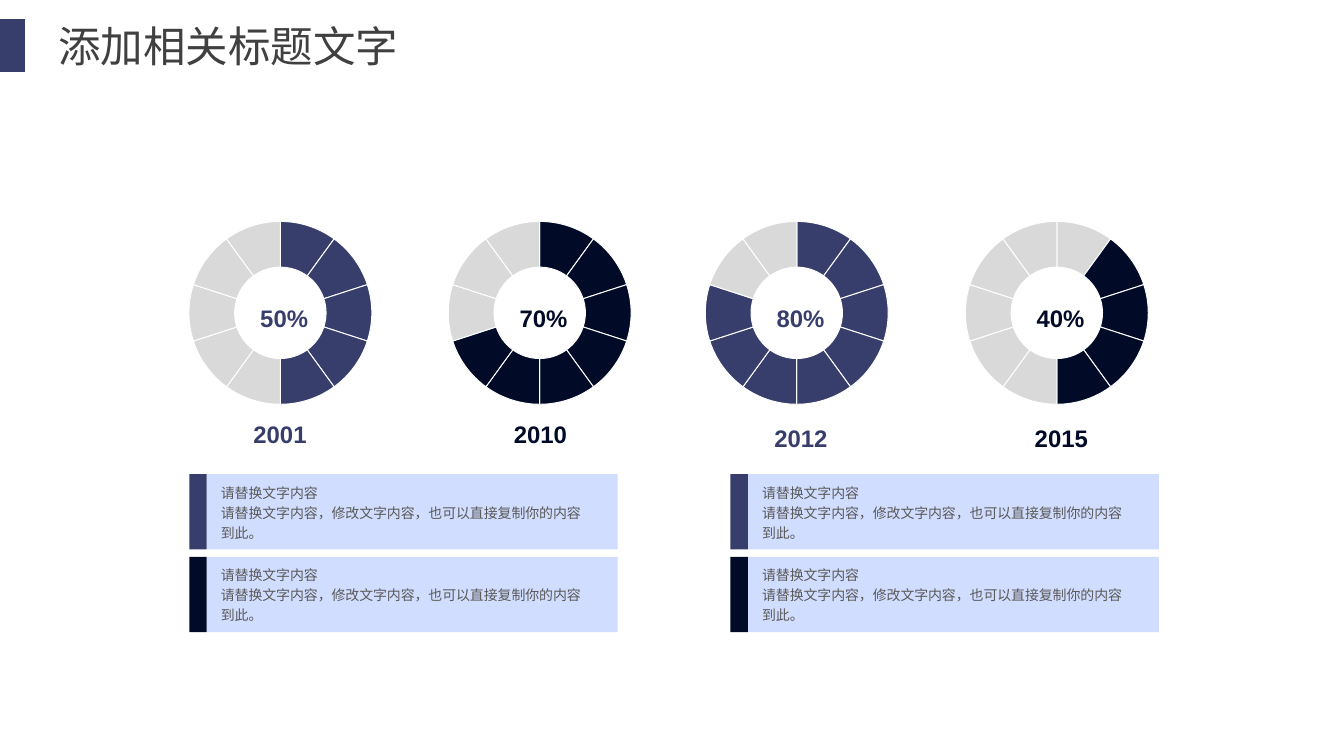
from pptx import Presentation
from pptx.chart.data import CategoryChartData
from pptx.dml.color import RGBColor
from pptx.enum.chart import XL_CHART_TYPE as ChartType
from pptx.enum.shapes import MSO_SHAPE as Shape
from pptx.enum.text import MSO_ANCHOR as Anchor, MSO_AUTO_SIZE as AutoSize, PP_ALIGN as Align
from pptx.oxml.ns import qn
from pptx.util import Cm, Pt

INDIGO = RGBColor(0x38, 0x3E, 0x6B)
NAVY = RGBColor(0x01, 0x0B, 0x28)
PALE_BLUE = RGBColor(0xD1, 0xDD, 0xFE)
LIGHT_GREY = RGBColor(0xD9, 0xD9, 0xD9)
BODY_GREY = RGBColor(0x59, 0x59, 0x59)
TITLE_GREY = RGBColor(0x40, 0x40, 0x40)
WHITE = RGBColor(0xFF, 0xFF, 0xFF)
BLACK = RGBColor(0, 0, 0)
FONT = "Arial"

HEADING = "添加相关标题文字"
# year, share, first filled segment, filled segments, colour, ring left, year top
RINGS = [
    ("2001", "50%", 0, 5, INDIGO, 4.67, 11),
    ("2010", "70%", 0, 7, NAVY, 11.56, 11),
    ("2012", "80%", 0, 8, INDIGO, 18.39, 11.1),
    ("2015", "40%", 1, 4, NAVY, 25.3, 11.1),
]
SEGMENTS = 10
NOTE = "请替换文字内容\n请替换文字内容，修改文字内容，也可以直接复制你的内容到此。"
PANEL_LEFTS = (5.03, 19.41)
PANEL_ROWS = ((12.6, INDIGO), (14.8, NAVY))

RING_TOP, RING_WIDTH, RING_HEIGHT = 5.38, 5.56, 5.87
YEAR_LEFT, YEAR_STEP = 6.73, 6.92
STRIPE_WIDTH, PANEL_WIDTH, PANEL_HEIGHT = 0.46, 10.92, 2


def add_block(shapes, left, top, width, height, colour):
    """Add a plain filled rectangle."""
    block = shapes.add_shape(Shape.RECTANGLE, Cm(left), Cm(top), Cm(width), Cm(height))
    block.shadow.inherit = False
    block.fill.solid()
    block.fill.fore_color.rgb = colour
    block.line.fill.background()


def style_text(frame, text, size, colour, bold=False, align=Align.LEFT, spacing=1.2):
    """Fill a text frame without margins and format its runs."""
    frame.text = text
    frame.margin_left = frame.margin_right = frame.margin_top = frame.margin_bottom = 0
    for paragraph in frame.paragraphs:
        paragraph.alignment = align
        paragraph.line_spacing = spacing
        for run in paragraph.runs:
            run.font.name = FONT
            run.font.size = Pt(size)
            run.font.bold = bold
            run.font.color.rgb = colour


def add_label(shapes, left, top, width, height, wrap=True, anchor=Anchor.TOP):
    """Add an empty text box and return its frame."""
    frame = shapes.add_textbox(Cm(left), Cm(top), Cm(width), Cm(height)).text_frame
    frame.word_wrap = wrap
    frame.vertical_anchor = anchor
    return frame


def add_ring(shapes, left, first, filled, colour):
    """Add a doughnut of equal segments with some of them coloured."""
    segments = CategoryChartData()
    segments.categories = [str(number + 1) for number in range(SEGMENTS)]
    segments.add_series("Series 1", [10] * SEGMENTS)
    ring = shapes.add_chart(ChartType.DOUGHNUT, Cm(left), Cm(RING_TOP),
                            Cm(RING_WIDTH), Cm(RING_HEIGHT), segments).chart
    ring.has_legend = False
    ring.has_title = False
    ring.font.name = FONT
    ring.font.size = Pt(18)
    ring.font.color.rgb = BLACK
    plot = ring.plots[0]
    plot.vary_by_categories = True
    for hole in ring.element.iter(qn("c:holeSize")):
        hole.set("val", "80")
    for number in range(SEGMENTS):
        segment = plot.series[0].points[number].format
        segment.fill.solid()
        segment.fill.fore_color.rgb = colour if first <= number < first + filled else LIGHT_GREY
        segment.line.color.rgb = WHITE
        segment.line.width = Pt(0.75)


def add_panel(shapes, left, top, colour):
    """Add a pale panel with a coloured stripe and its note."""
    panel = shapes.add_group_shape().shapes
    text_left = left + STRIPE_WIDTH
    add_block(panel, text_left, top, PANEL_WIDTH, PANEL_HEIGHT, PALE_BLUE)
    add_block(panel, left, top, STRIPE_WIDTH, PANEL_HEIGHT, colour)
    note = add_label(shapes, text_left + 0.38, top + 0.18, 9.91, 1.63)
    style_text(note, NOTE, 10.5, BODY_GREY)


def main():
    """Build the slide and save it."""
    deck = Presentation()
    deck.slide_width, deck.slide_height = Cm(35.71), Cm(20.09)
    slide = deck.slides.add_slide(deck.slide_layouts[5])
    shapes = slide.shapes

    title = shapes.title
    title.left, title.top, title.width, title.height = Cm(1.55), Cm(0.53), Cm(11), Cm(1.37)
    style_text(title.text_frame, HEADING, 32, TITLE_GREY, spacing=1.0)
    title.text_frame.vertical_anchor = Anchor.TOP
    title.text_frame.auto_size = AutoSize.NONE
    add_block(shapes, 0, 0.51, 0.66, 1.4, INDIGO)

    for index, (year, share, first, filled, colour, left, year_top) in enumerate(RINGS):
        add_ring(shapes, left, first, filled, colour)
        share_label = add_label(shapes, left + 1.8, 7.8, 2.16, 1.17, anchor=Anchor.MIDDLE)
        style_text(share_label, share, 18, colour, True, Align.CENTER)
        year_label = add_label(shapes, YEAR_LEFT + index * YEAR_STEP, year_top, 1.42, 0.91, wrap=False)
        style_text(year_label, year, 18, colour, True, Align.CENTER)

    for left in PANEL_LEFTS:
        for top, colour in PANEL_ROWS:
            add_panel(shapes, left, top, colour)

    deck.save("out.pptx")


if __name__ == "__main__":
    main()
